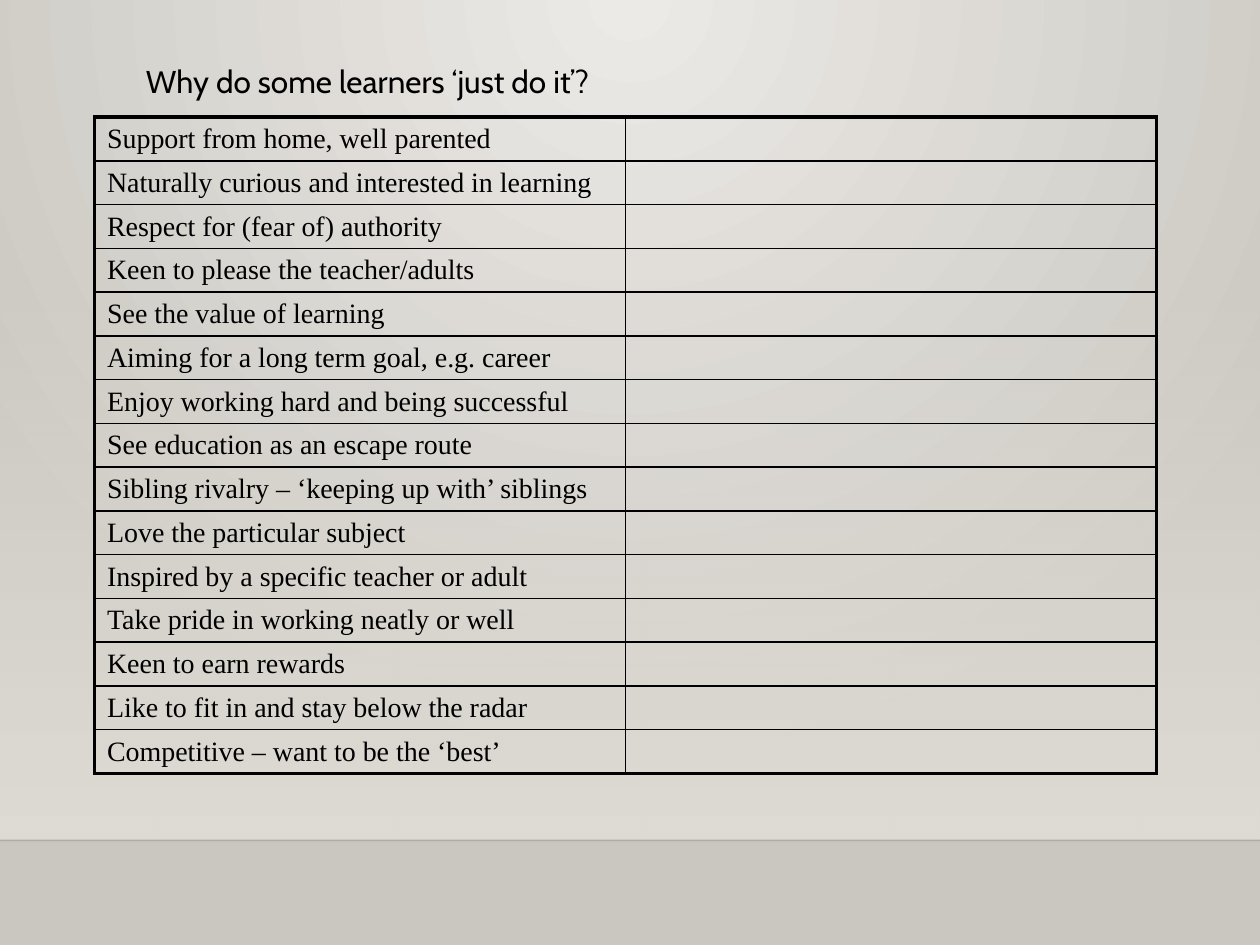
import pptx
import pptx.util
import pptx.dml.color
import pptx.enum.shapes
import pptx.enum.text
import pptx.oxml
import pptx.oxml.ns
from lxml import etree

Inches, Pt = pptx.util.Inches, pptx.util.Pt
RGBColor = pptx.dml.color.RGBColor

TITLE = "Why do some learners ‘just do it’?"
REASONS = [
    "Support from home, well parented",
    "Naturally curious and interested in learning",
    "Respect for (fear of) authority",
    "Keen to please the teacher/adults",
    "See the value of learning",
    "Aiming for a long term goal, e.g. career",
    "Enjoy working hard and being successful",
    "See education as an escape route",
    "Sibling rivalry – ‘keeping up with’ siblings",
    "Love the particular subject",
    "Inspired by a specific teacher or adult",
    "Take pride in working neatly or well",
    "Keen to earn rewards",
    "Like to fit in and stay below the radar",
    "Competitive – want to be the ‘best’",
]

BLACK = RGBColor(0x00, 0x00, 0x00)
GLOW = RGBColor(0xEC, 0xEA, 0xE7)
FLOOR = RGBColor(0xCA, 0xC7, 0xC1)
WALL = RGBColor(0xDF, 0xDB, 0xD5)

WIDTH, HEIGHT = Inches(10), Inches(7.5)
WALL_TOP, WALL_BOTTOM = Inches(2.2), Inches(6.67)
TABLE_LEFT, TABLE_TOP = Inches(0.75), Inches(0.93)
TABLE_WIDTH, TABLE_HEIGHT = Inches(8.43), Inches(5.21)
COLUMNS = 2
OUTER, INNER = Pt(2.25), Pt(1)


def child(parent, tag, **attributes):
    element = etree.SubElement(parent, pptx.oxml.ns.qn(tag))
    for name, value in attributes.items():
        element.set(name, str(value))
    return element


def set_gradient(fill, start, end, start_alpha=100, centre=None):
    """Two-stop gradient: round when a centre is given, else top to bottom."""
    fill.gradient()
    fill.gradient_angle = 270
    for stop, color in zip(fill.gradient_stops, (start, end)):
        stop.color.rgb = color
    first, last = fill.gradient_stops
    first.position, last.position = 0, 1
    grad = fill._xPr.find(pptx.oxml.ns.qn("a:gradFill"))
    if start_alpha < 100:
        color = grad.find(".//" + pptx.oxml.ns.qn("a:srgbClr"))
        child(color, "a:alpha", val=start_alpha * 1000)
    if centre:
        grad.remove(grad.find(pptx.oxml.ns.qn("a:lin")))
        circle = child(grad, "a:path", path="circle")
        child(circle, "a:fillToRect", **centre)


def add_backdrop(page):
    set_gradient(page.background.fill, GLOW, FLOOR,
                 centre=dict(l=43000, t=0, r=43000, b=100000))
    wall = page.shapes.add_shape(pptx.enum.shapes.MSO_SHAPE.RECTANGLE,
                                 0, WALL_TOP, WIDTH, WALL_BOTTOM - WALL_TOP)
    wall.shadow.inherit = False
    wall.line.fill.background()
    set_gradient(wall.fill, WALL, WALL, start_alpha=0)

    edge = page.shapes.add_connector(pptx.enum.shapes.MSO_CONNECTOR.STRAIGHT,
                                     0, WALL_BOTTOM, WIDTH, WALL_BOTTOM)
    edge.line.width = Pt(1)
    edge.line.color.rgb = BLACK
    properties = edge._element.spPr
    child(properties.find(".//" + pptx.oxml.ns.qn("a:srgbClr")), "a:alpha", val=20000)
    child(properties, "a:effectLst")


def write(para, text, font, size):
    span = para.add_run()
    span.text = text
    span.font.name = font
    span.font.size = Pt(size)
    span.font.color.rgb = BLACK


def set_borders(cell, widths):
    properties = cell._tc.get_or_add_tcPr()
    for position, (side, width) in enumerate(widths.items()):
        line = etree.Element(pptx.oxml.ns.qn("a:ln" + side), w=str(int(width)))
        child(child(line, "a:solidFill"), "a:srgbClr", val=BLACK)
        properties.insert(position, line)


def add_reasons(page):
    rows = len(REASONS)
    table = page.shapes.add_table(rows, COLUMNS, TABLE_LEFT, TABLE_TOP,
                                  TABLE_WIDTH, TABLE_HEIGHT).table
    table.first_row = table.horz_banding = False
    for row, reason in enumerate(REASONS):
        table.rows[row].height = TABLE_HEIGHT // rows
        for column in range(COLUMNS):
            cell = table.cell(row, column)
            cell.fill.background()
            cell.margin_top = cell.margin_bottom = 0
            cell.vertical_anchor = pptx.enum.text.MSO_ANCHOR.MIDDLE
            set_borders(cell, {
                "L": OUTER if column == 0 else INNER,
                "R": OUTER if column == COLUMNS - 1 else INNER,
                "T": OUTER if row == 0 else INNER,
                "B": OUTER if row == rows - 1 else INNER,
            })
        write(table.cell(row, 0).text_frame.paragraphs[0], reason, "Times New Roman", 16)


def add_title(page):
    box = page.shapes.add_textbox(Inches(1.06), Inches(0.44), Inches(4.09), Inches(0.4))
    box.text_frame.word_wrap = True
    write(box.text_frame.paragraphs[0], TITLE, "Cabin", 18)


def main():
    deck = pptx.Presentation()
    deck.slide_width, deck.slide_height = WIDTH, HEIGHT
    page = deck.slides.add_slide(deck.slide_layouts[6])
    add_backdrop(page)
    add_reasons(page)
    add_title(page)
    deck.save("out.pptx")


if __name__ == "__main__":
    main()
